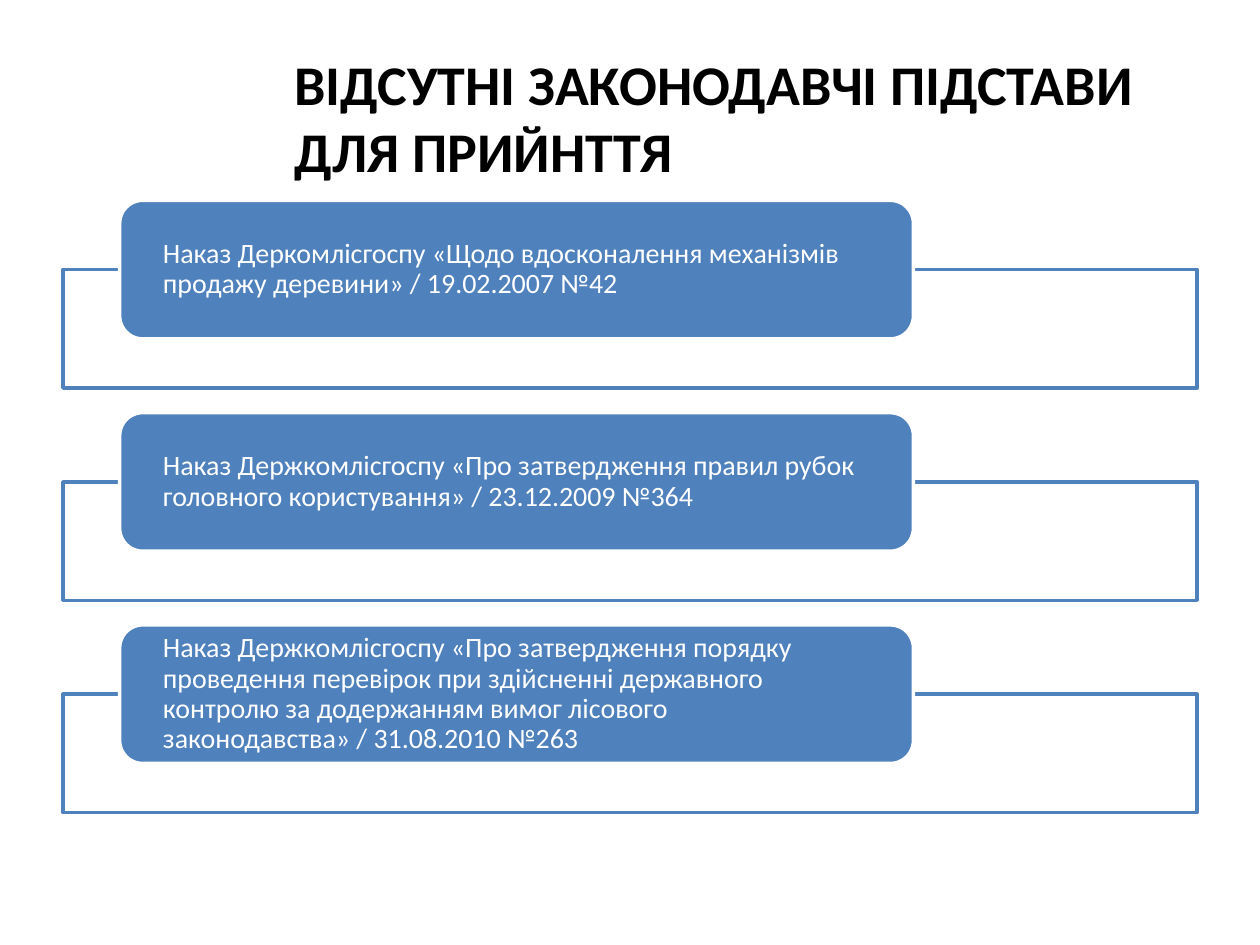
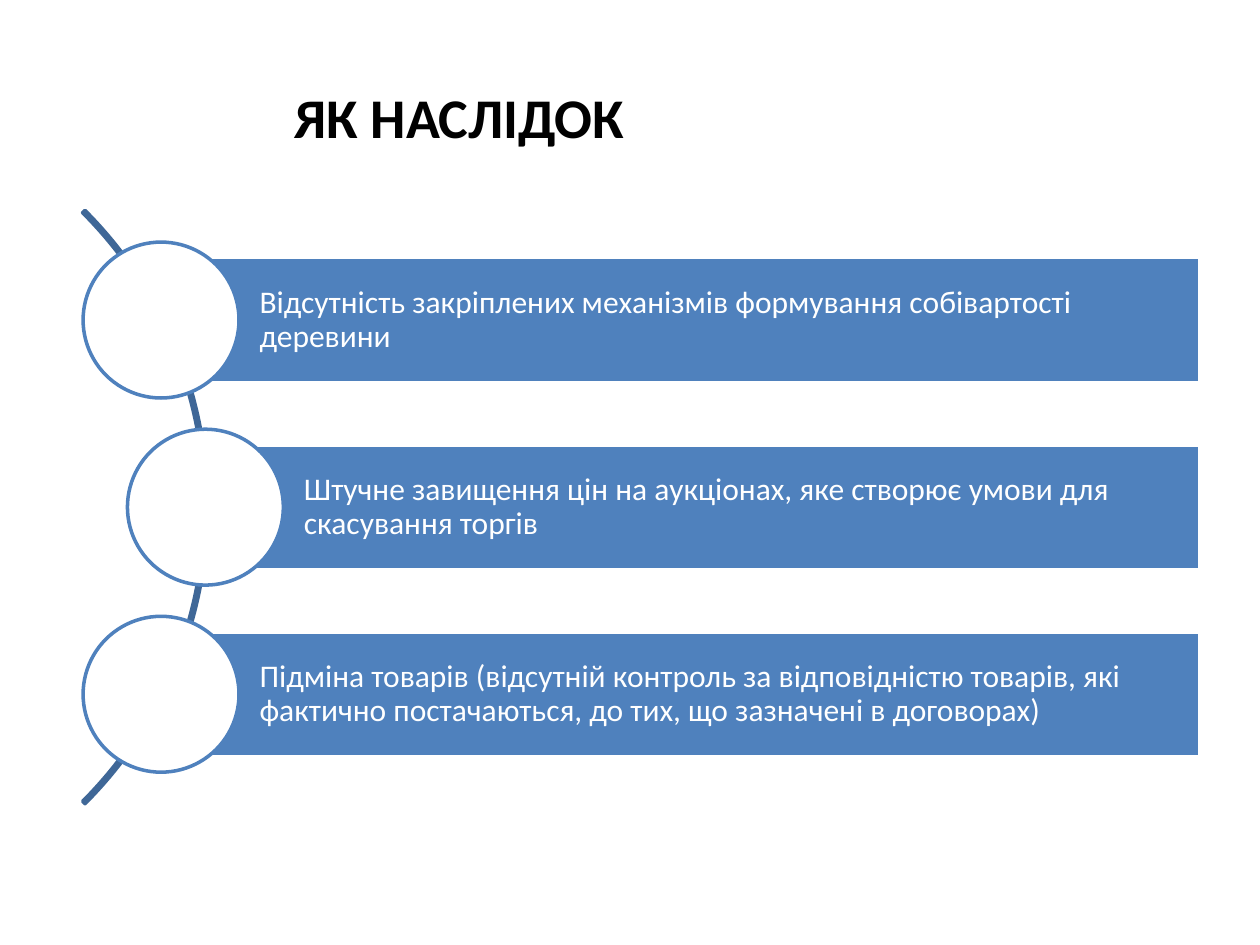
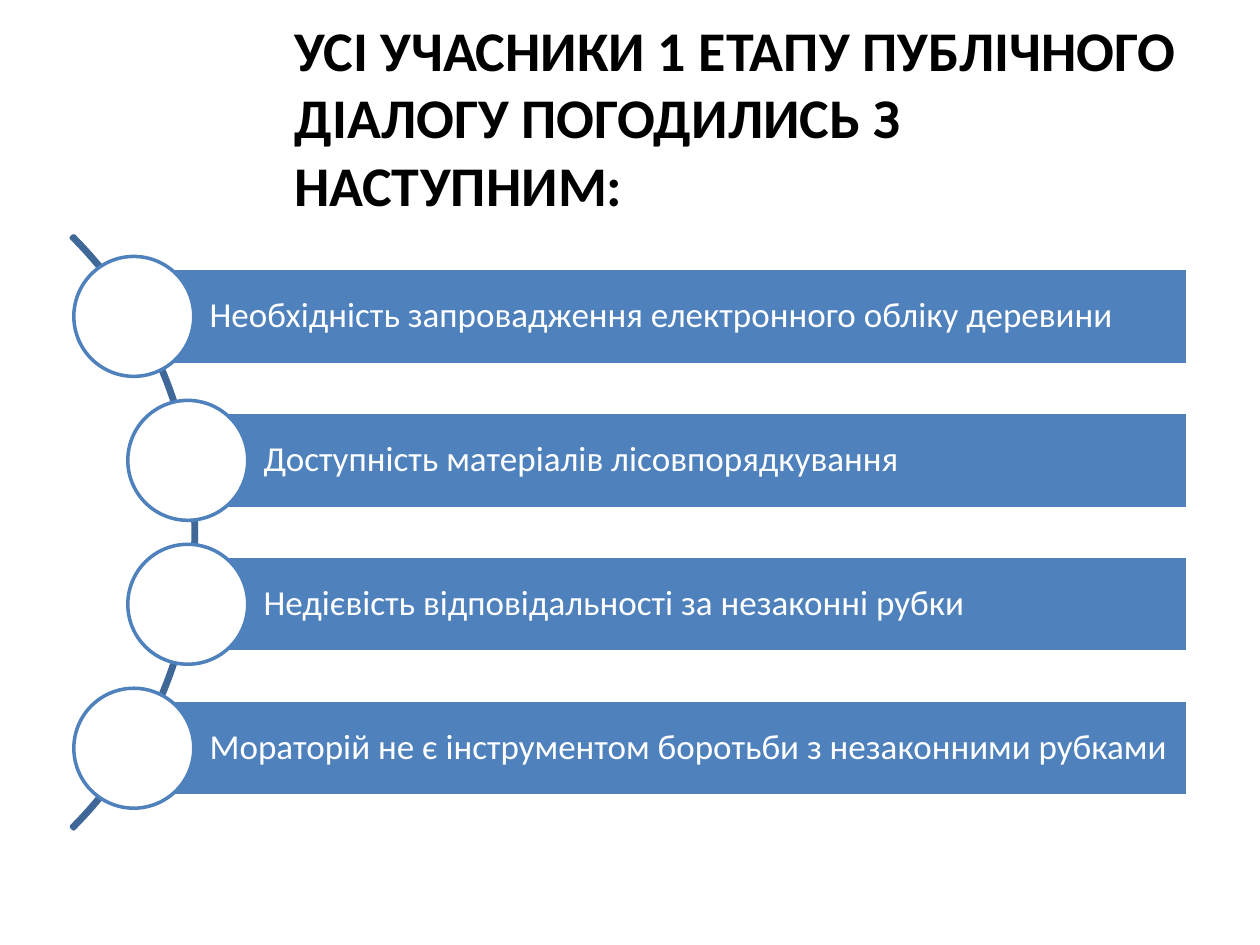
from dataclasses import dataclass
from math import sqrt

from lxml import etree
from pptx import Presentation
from pptx.dml.color import RGBColor
from pptx.enum.shapes import MSO_SHAPE
from pptx.enum.text import MSO_ANCHOR, PP_ALIGN
from pptx.oxml.ns import qn
from pptx.util import Inches, Pt

RECT = MSO_SHAPE.RECTANGLE
PILL = MSO_SHAPE.ROUNDED_RECTANGLE
OVAL = MSO_SHAPE.OVAL
ARC = MSO_SHAPE.BLOCK_ARC
MIDDLE = MSO_ANCHOR.MIDDLE
LEFT = PP_ALIGN.LEFT


@dataclass(frozen=True)
class Theme:
    """Colours, font and type sizes of the deck."""
    font: str = "Calibri"
    ink: str = "000000"
    paper: str = "FFFFFF"
    blue: str = "4F81BD"
    navy: str = "3F6797"
    line: int = 2
    title: int = 32
    large: int = 20
    medium: int = 18
    small: int = 16


THEME = Theme()
HEAD = (2.24, 0.3, 7.26, 1.25)

ORDERS = (
    "Наказ Деркомлісгоспу «Щодо вдосконалення механізмів продажу деревини» / 19.02.2007 №42",
    "Наказ Держкомлісгоспу «Про затвердження правил рубок головного користування» "
    "/ 23.12.2009 №364",
    "Наказ Держкомлісгоспу «Про затвердження порядку проведення перевірок при здійсненні "
    "державного контролю за додержанням вимог лісового законодавства» / 31.08.2010 №263",
)
EFFECTS = (
    "Відсутність закріплених механізмів формування собівартості деревини",
    "Штучне завищення цін на аукціонах, яке створює умови для скасування торгів",
    "Підміна товарів (відсутній контроль за відповідністю товарів, які фактично "
    "постачаються, до тих, що зазначені в договорах)",
)
POINTS = (
    "Необхідність запровадження електронного обліку деревини",
    "Доступність матеріалів лісовпорядкування",
    "Недієвість відповідальності за незаконні рубки",
    "Мораторій не є інструментом боротьби з незаконними рубками",
)


def add_shape(slide, kind, box, fill, line):
    """Add a flat preset shape; a fill of None leaves it hollow."""
    shape = slide.shapes.add_shape(kind, *map(Inches, box))
    shape.shadow.inherit = False
    if fill:
        shape.fill.solid()
        shape.fill.fore_color.rgb = RGBColor.from_string(fill)
    else:
        shape.fill.background()
    shape.line.color.rgb = RGBColor.from_string(line)
    shape.line.width = Pt(THEME.line)
    return shape


def write(shape, text, size, color, pads, bold=False, space=None):
    """Write one left-aligned paragraph, centred on the shape's height."""
    frame = shape.text_frame
    frame.word_wrap = True
    frame.vertical_anchor = MIDDLE
    frame.margin_left, frame.margin_top, frame.margin_right, frame.margin_bottom = map(
        Inches, pads)
    para = frame.paragraphs[0]
    para.alignment = LEFT
    if space:
        para.line_spacing = space
    run = para.add_run()
    run.text = text
    run.font.name = THEME.font
    run.font.size = Pt(size)
    run.font.bold = bold
    run.font.color.rgb = RGBColor.from_string(color)


def add_page(deck, title):
    """Add a blank slide with the shared title."""
    slide = deck.slides.add_slide(deck.slide_layouts[6])
    head = slide.shapes.add_textbox(*map(Inches, HEAD))
    write(head, title, THEME.title, THEME.ink, (0.1, 0.05, 0.1, 0.05), bold=True)
    return slide


def add_frame(slide, box):
    """Add an outlined frame with a slightly clear white fill."""
    frame = add_shape(slide, RECT, box, THEME.paper, THEME.blue)
    tint = frame.fill._xPr.find(qn("a:solidFill"))[0]
    etree.SubElement(tint, qn("a:alpha")).set("val", "90000")


def draw_stack(slide, box, items):
    """Stack frames down the box, each with a pill across its top edge."""
    left, top, width, height = box
    pill, frame = 1.1, 0.94
    last = height - pill / 2 - frame
    pitch = last / (len(items) - 1)
    for i, text in enumerate(items):
        y = top + i * pitch
        add_frame(slide, (left, y + pill / 2, width, frame))
        spot = (left + 0.05 * width, y, 0.7 * width, pill)
        shape = add_shape(slide, PILL, spot, THEME.blue, THEME.paper)
        write(shape, text, THEME.small, THEME.paper, (0.29, 0, 0.29, 0), space=0.9)


def draw_curve(slide, box, items, size):
    """Set bars and discs along an arc that bulges into the box."""
    left, top, width, height = box
    radius = 3.33
    hub, mid = left - 2.18, top + height / 2
    arc = add_shape(slide, ARC, (hub - radius, mid - radius, 2 * radius, 2 * radius),
                    None, THEME.navy)
    for i, value in enumerate((189, 27, 0.004)):
        arc.adjustments[i] = value

    bar = height / (1.5 * len(items) + 0.5)
    disc = 1.25 * bar
    for i, text in enumerate(items):
        y = top + bar * (1 + 1.5 * i)
        x = hub + sqrt((radius - 0.02) ** 2 - (y - mid) ** 2)
        strip = add_shape(slide, RECT, (x, y - bar / 2, left + width - x, bar),
                          THEME.blue, THEME.paper)
        write(strip, text, size, THEME.paper, (0.79 * bar, 0.05, 0.05, 0.05), space=0.9)
        add_shape(slide, OVAL, (x - disc / 2, y - disc / 2, disc, disc),
                  THEME.paper, THEME.blue)


def main():
    """Build the three slides and save the deck."""
    deck = Presentation()
    deck.slide_width, deck.slide_height = Inches(10), Inches(7.5)
    slide = add_page(deck, "ВІДСУТНІ ЗАКОНОДАВЧІ ПІДСТАВИ ДЛЯ ПРИЙНТТЯ")
    draw_stack(slide, (0.5, 1.59, 9, 4.86), ORDERS)
    slide = add_page(deck, "ЯК НАСЛІДОК")
    draw_curve(slide, (0.5, 1.55, 9.02, 4.95), EFFECTS, THEME.medium)
    slide = add_page(deck, "УСІ УЧАСНИКИ 1 ЕТАПУ ПУБЛІЧНОГО ДІАЛОГУ ПОГОДИЛИСЬ З НАСТУПНИМ:")
    draw_curve(slide, (0.41, 1.75, 9.02, 4.95), POINTS, THEME.large)
    deck.save("out.pptx")


if __name__ == "__main__":
    main()
